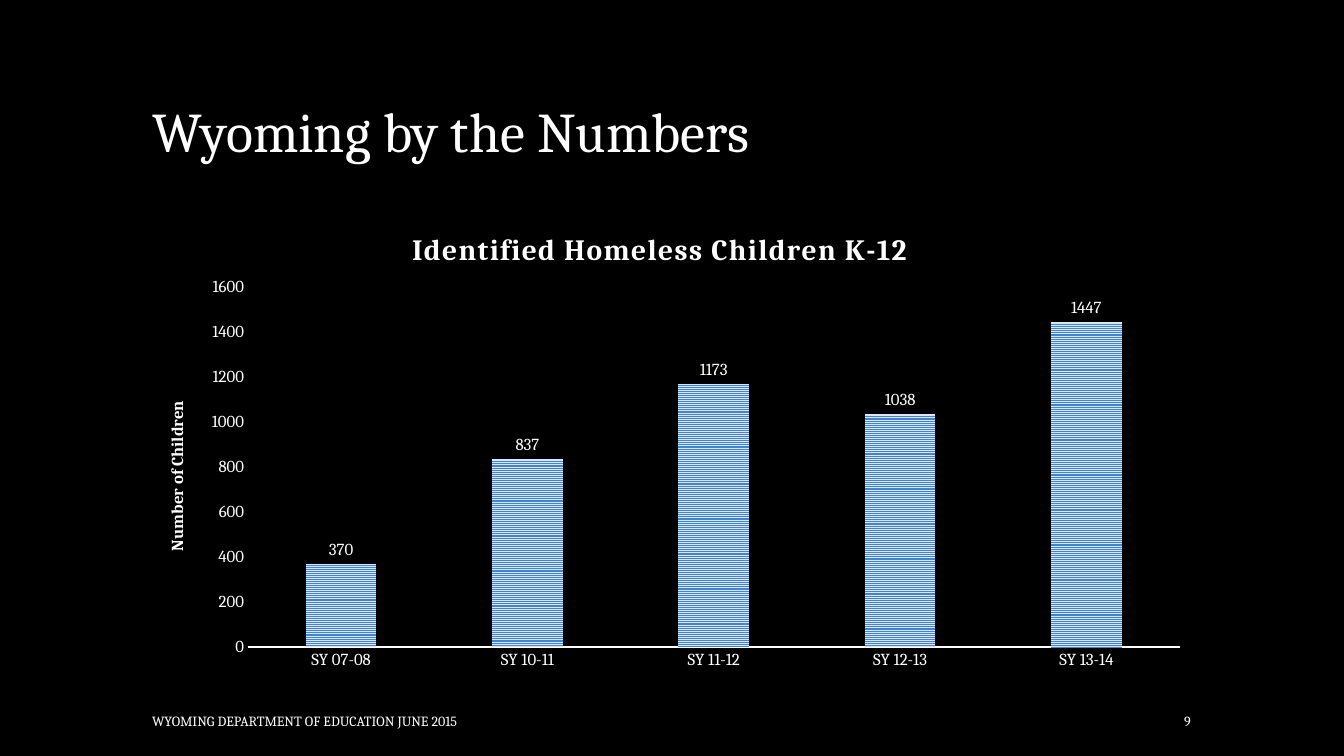
from dataclasses import dataclass

from lxml import etree
from pptx import Presentation
from pptx import util as u
from pptx.chart.data import CategoryChartData
from pptx.dml.color import RGBColor
from pptx.enum import chart as ch, dml, text
from pptx.oxml import parse_xml
from pptx.oxml.ns import nsdecls

WIDE, HIGH = 13.33, 7.5
LEFT, SPAN = 1.41, 10.5


@dataclass(frozen=True)
class Theme:
    face: str = "Cambria"
    back: RGBColor = RGBColor(0, 0, 0)
    ink: RGBColor = RGBColor(255, 255, 255)
    blue: RGBColor = RGBColor(0x42, 0x83, 0xD2)
    pale: RGBColor = RGBColor(0xD9, 0xE6, 0xF6)
    head: int = 40
    sub: int = 21
    label: int = 12
    small: int = 10


THEME = Theme()


def style(font, size, bold=False):
    font.name, font.size, font.bold = THEME.face, u.Pt(size), bold
    font.color.rgb = THEME.ink


def place(shape, box):
    shape.left, shape.top, shape.width, shape.height = map(u.Inches, box)


def add_title(slide, box, words):
    title = slide.shapes.title
    place(title, box)
    frame = title.text_frame
    frame.text = words
    frame.word_wrap = True
    frame.vertical_anchor = text.MSO_ANCHOR.BOTTOM
    para = frame.paragraphs[0]
    para.alignment = text.PP_ALIGN.LEFT
    para.line_spacing = 0.8
    style(para.font, THEME.head)


def add_note(slide, box, words, align):
    frame = slide.shapes.add_textbox(*map(u.Inches, box)).text_frame
    frame.word_wrap = True
    frame.vertical_anchor = text.MSO_ANCHOR.MIDDLE
    para = frame.paragraphs[0]
    para.text, para.alignment = words, align
    style(para.font, THEME.small)


def layout(x, y, size=None):
    """Build a manual chart layout from shares of the chart's box."""
    parts = {"xMode": "edge", "yMode": "edge", "x": x, "y": y}
    if size:
        parts = {"layoutTarget": "inner", **parts, "w": size[0], "h": size[1]}
    tags = "".join(f'<c:{key} val="{val}"/>' for key, val in parts.items())
    return parse_xml(f'<c:layout {nsdecls("c")}><c:manualLayout>{tags}'
                     '</c:manualLayout></c:layout>')


def set_layout(node, *shares):
    for old in node.xpath("./c:layout"):
        node.remove(old)
    spot = node.xpath("./c:tx")
    if spot:
        spot[0].addnext(layout(*shares))
    else:
        node.insert(0, layout(*shares))


def set_caption(owner, words, size, x, y, gap=0):
    """Title a chart or axis; gap is letter spacing in hundredths of a point."""
    owner.has_title = True
    title = owner.chart_title if hasattr(owner, "chart_title") else owner.axis_title
    para = title.text_frame.paragraphs[0]
    run = para.add_run()
    run.text = words
    style(run.font, size, True)
    if gap:
        run.font._element.set("spc", str(gap))
    node = para._p.xpath("ancestor::c:title")[0]
    set_layout(node, x, y)
    return title


def style_axes(chart):
    cats, vals = chart.category_axis, chart.value_axis
    for axis in (cats, vals):
        axis.has_major_gridlines = False
        axis.major_tick_mark = axis.minor_tick_mark = ch.XL_TICK_MARK.NONE
        style(axis.tick_labels.font, THEME.label)
    cats.format.line.color.rgb = THEME.ink
    cats.format.line.width = u.Pt(1.5)
    vals.format.line.fill.background()
    vals.minimum_scale, vals.maximum_scale, vals.major_unit = 0, 1600, 200
    title = set_caption(vals, "Number of Children", THEME.label, 0.02, 0.41)
    title.text_frame._txBody.bodyPr.set("rot", "-5400000")
    title.text_frame._txBody.bodyPr.set("vert", "horz")


def style_bars(plot):
    plot.gap_width, plot.overlap = 164, -22
    plot.vary_by_categories = False
    fill = plot.series[0].format.fill
    fill.patterned()
    fill.pattern = dml.MSO_PATTERN.NARROW_HORIZONTAL
    fill.fore_color.rgb, fill.back_color.rgb = THEME.blue, THEME.pale
    plot.has_data_labels = True
    labels = plot.data_labels
    labels.show_value = True
    labels.position = ch.XL_LABEL_POSITION.OUTSIDE_END
    style(labels.font, THEME.label)


def add_bars(slide, box, counts):
    data = CategoryChartData()
    data.categories = list(counts)
    data.add_series("Series 1", list(counts.values()))
    chart = slide.shapes.add_chart(
        ch.XL_CHART_TYPE.COLUMN_CLUSTERED, *map(u.Inches, box), data).chart
    style(chart.font, THEME.small)
    chart.has_legend = False
    set_caption(chart, "Identified Homeless Children K-12", THEME.sub,
                0.25, 0.05, gap=100)
    style_axes(chart)
    style_bars(chart.plots[0])
    area = chart._chartSpace.xpath("./c:chart/c:plotArea")[0]
    set_layout(area, 0.1, 0.18, (0.88, 0.75))


def main():
    deck = Presentation()
    deck.slide_width, deck.slide_height = u.Inches(WIDE), u.Inches(HIGH)
    slide = deck.slides.add_slide(deck.slide_layouts[5])
    slide.background.fill.solid()
    slide.background.fill.fore_color.rgb = THEME.back
    add_title(slide, (LEFT, 0.42, SPAN, 1.25), "Wyoming by the Numbers")
    add_bars(slide, (LEFT, 2, SPAN, 4.75), {
        "SY 07-08": 370, "SY 10-11": 837, "SY 11-12": 1173,
        "SY 12-13": 1038, "SY 13-14": 1447})
    add_note(slide, (LEFT, 7, 6.92, 0.3),
             "WYOMING DEPARTMENT OF EDUCATION JUNE 2015", text.PP_ALIGN.LEFT)
    add_note(slide, (LEFT + SPAN - 1.33, 7, 1.33, 0.3), "9", text.PP_ALIGN.RIGHT)
    deck.save("out.pptx")


if __name__ == "__main__":
    main()
